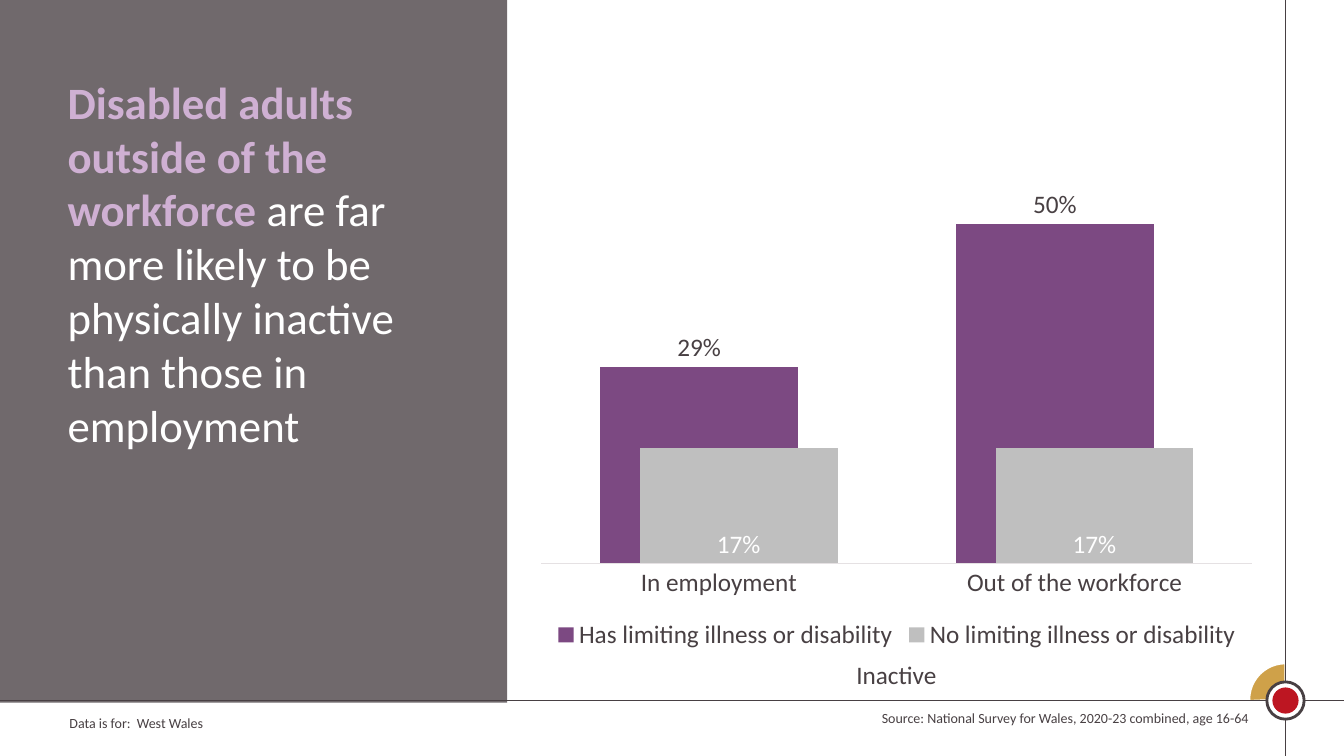
from dataclasses import dataclass

from lxml.etree import SubElement
from pptx import Presentation
from pptx.chart.data import CategoryChartData as Data
from pptx.dml.color import RGBColor as Rgb
from pptx.enum.chart import XL_CHART_TYPE as Kind
from pptx.enum.chart import XL_LABEL_POSITION as Spot
from pptx.enum.chart import XL_LEGEND_POSITION as Side
from pptx.enum.chart import XL_TICK_LABEL_POSITION as Tick
from pptx.enum.chart import XL_TICK_MARK as Mark
from pptx.enum.shapes import MSO_CONNECTOR as Conn
from pptx.enum.shapes import MSO_SHAPE as Shape
from pptx.enum.text import MSO_ANCHOR as Anchor
from pptx.enum.text import MSO_AUTO_SIZE as Fit
from pptx.enum.text import PP_ALIGN as Align
from pptx.oxml.ns import qn
from pptx.util import Inches, Pt


@dataclass(frozen=True)
class Theme:
    face: str = "Calibri"
    ink: str = "484043"
    white: str = "FFFFFF"
    lilac: str = "CFB0D3"
    plum: str = "7C4982"
    grey: str = "BFBFBF"
    rule: str = "E5E1E3"
    gold: str = "CFA149"
    red: str = "BD1622"
    head: int = 32
    body: int = 18
    note: int = 10


THEME = Theme()
WIDE, HIGH = 13.33, 7.5


def style(font, size, color, bold=False):
    font.name = THEME.face
    font.size = Pt(size)
    font.bold = bold
    font.color.rgb = Rgb.from_string(color)


def add_shape(slide, kind, box, fill, line=None, width=0):
    shape = slide.shapes.add_shape(kind, *map(Inches, box))
    shape.shadow.inherit = False
    shape.fill.solid()
    shape.fill.fore_color.rgb = Rgb.from_string(fill)
    if line:
        shape.line.color.rgb = Rgb.from_string(line)
        shape.line.width = Pt(width)
    else:
        shape.line.fill.background()
    return shape


def add_disc(slide, x, y, size, fill, line=None, width=0):
    box = (x - size / 2, y - size / 2, size, size)
    add_shape(slide, Shape.OVAL, box, fill, line, width)


def add_line(slide, *ends):
    line = slide.shapes.add_connector(Conn.STRAIGHT, *map(Inches, ends))
    line.line.color.rgb = Rgb.from_string(THEME.ink)
    line.line.width = Pt(1)
    SubElement(line.element.spPr, qn("a:effectLst"))


def add_note(slide, box, text, size, align=Align.LEFT):
    frame = slide.shapes.add_textbox(*map(Inches, box)).text_frame
    frame.word_wrap = True
    frame.text = text
    para = frame.paragraphs[0]
    para.alignment = align
    style(para.runs[0].font, size, THEME.ink)


def add_frame(slide, x, y):
    size = 0.72
    box = (x - size / 2, y - size / 2 - 0.01, size, size)
    pie = add_shape(slide, Shape.PIE, box, THEME.gold, THEME.white, 1.5)
    pie.adjustments[0] = 106.62
    pie.adjustments[1] = 162
    add_line(slide, x, 0, x, HIGH)
    add_line(slide, 0, y, WIDE, y)
    add_disc(slide, x, y, 0.37, THEME.white, THEME.ink, 2)
    add_disc(slide, x, y, 0.26, THEME.red)


def add_panel(slide, box):
    panel = add_shape(slide, Shape.RECTANGLE, box, THEME.ink)
    tint = panel.element.spPr.find(qn("a:solidFill"))[0]
    SubElement(tint, qn("a:alpha"), val="78000")

    left, top = box[:2]
    title = slide.shapes.title
    slide.shapes.element.append(title.element)
    title.left, title.top = Inches(left + 0.58), Inches(top + 0.69)
    title.width, title.height = Inches(4.1), Inches(4.47)
    frame = title.text_frame
    frame.word_wrap = True
    frame.auto_size = Fit.NONE
    frame.vertical_anchor = Anchor.TOP
    para = frame.paragraphs[0]
    para.alignment = Align.LEFT
    for text, color, bold in (
        ("Disabled adults outside of the workforce ", THEME.lilac, True),
        ("are far more likely to be physically inactive than those in "
         "employment", THEME.white, False),
    ):
        run = para.add_run()
        run.text = text
        style(run.font, THEME.head, color, bold)


def set_plot(chart, **parts):
    area = chart.element.find(".//" + qn("c:plotArea"))
    layout = area.find(qn("c:layout"))
    if layout is None:
        layout = SubElement(area, qn("c:layout"))
        area.insert(0, layout)
    manual = SubElement(layout, qn("c:manualLayout"))
    modes = dict(layoutTarget="inner", xMode="edge", yMode="edge")
    for name, val in (modes | parts).items():
        SubElement(manual, qn("c:" + name), val=str(val))


def add_bars(slide, box):
    data = Data(number_format="0%")
    data.categories = ["In employment", "Out of the workforce"]
    data.add_series("Has limiting illness or disability", (0.29, 0.5))
    data.add_series("No limiting illness or disability", (0.17, 0.17))
    chart = slide.shapes.add_chart(
        Kind.COLUMN_CLUSTERED, *map(Inches, box), data).chart
    chart.has_title = False
    style(chart.font, THEME.body, THEME.ink)
    set_plot(chart, x=0.02, y=0.02, w=0.96, h=0.8)

    chart.has_legend = True
    chart.legend.position = Side.BOTTOM
    chart.legend.include_in_layout = False
    style(chart.legend.font, THEME.body, THEME.ink)

    axis = chart.category_axis
    axis.major_tick_mark = Mark.NONE
    axis.format.line.color.rgb = Rgb.from_string(THEME.rule)
    axis.format.line.width = Pt(0.75)
    style(axis.tick_labels.font, THEME.body, THEME.ink)
    scale = chart.value_axis
    scale.minimum_scale, scale.maximum_scale = 0, 0.6
    scale.has_major_gridlines = False
    scale.tick_label_position = Tick.NONE
    scale.visible = False

    plot = chart.plots[0]
    plot.gap_width, plot.overlap = 60, 80
    plot.vary_by_categories = False
    looks = (
        (THEME.plum, THEME.ink, Spot.OUTSIDE_END),
        (THEME.grey, THEME.white, Spot.INSIDE_BASE),
    )
    for bars, (fill, color, spot) in zip(plot.series, looks):
        bars.format.fill.solid()
        bars.format.fill.fore_color.rgb = Rgb.from_string(fill)
        labels = bars.data_labels
        labels.show_value = True
        labels.number_format = "0%"
        labels.number_format_is_linked = False
        labels.position = spot
        style(labels.font, THEME.body, color)

    left, top, width, height = box
    note = (left + width / 2 - 0.5, top + height - 0.01, 1.22, 0.4)
    add_note(slide, note, "Inactive", THEME.body)


def add_foot(slide, top):
    add_note(slide, (0.59, top + 0.05, 4.39, 0.27),
             "Data is for:  West Wales", THEME.note)
    add_note(slide, (8.32, top, 4.16, 0.27),
             "Source: National Survey for Wales, 2020-23 combined, age 16-64",
             THEME.note, Align.RIGHT)


def main():
    deck = Presentation()
    deck.slide_width, deck.slide_height = Inches(WIDE), Inches(HIGH)
    slide = deck.slides.add_slide(deck.slide_layouts[5])
    add_frame(slide, 12.75, 6.95)
    add_panel(slide, (-0.01, 0, 5.04, 6.97))
    add_bars(slide, (5.22, 1.45, 7.35, 5.05))
    add_foot(slide, 6.99)
    deck.save("out.pptx")


if __name__ == "__main__":
    main()
